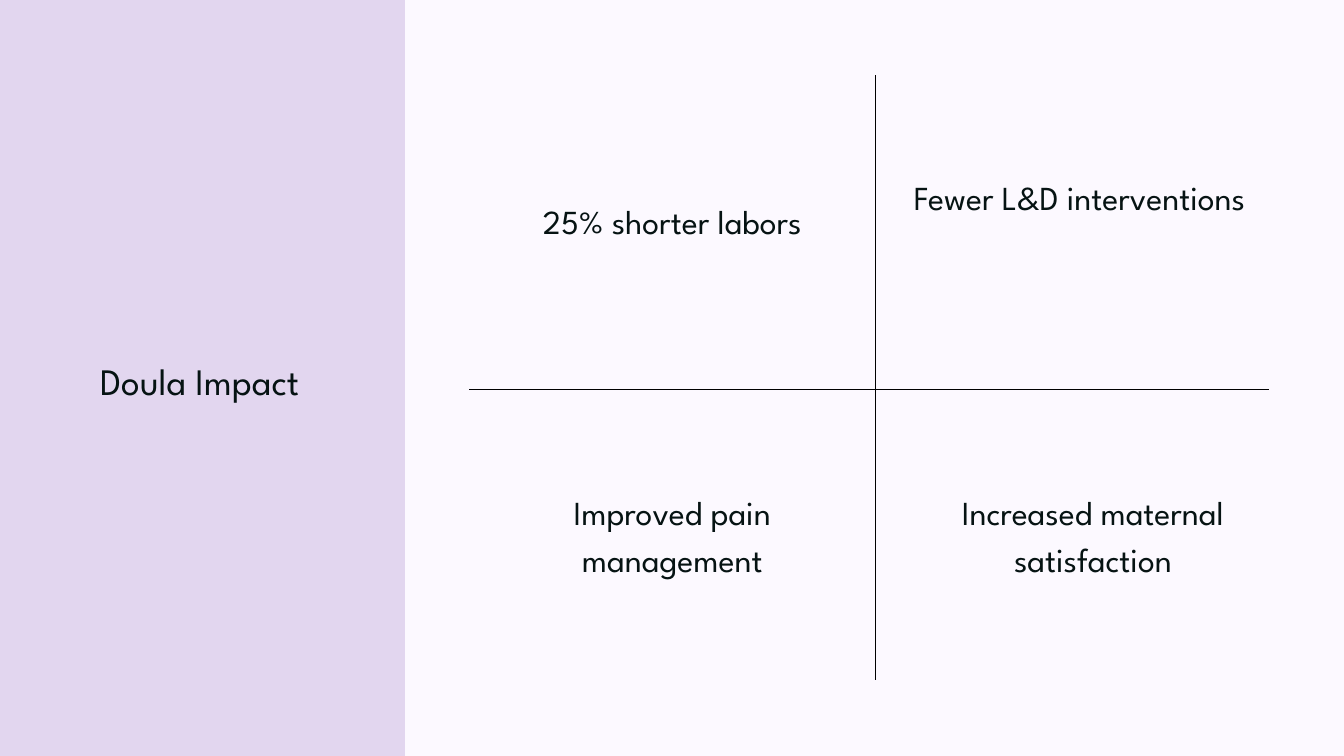
from typing import NamedTuple

import pptx
import pptx.dml.color
import pptx.enum.shapes
import pptx.enum.text
import pptx.oxml.ns
import pptx.util
from lxml import etree

Inches = pptx.util.Inches
Pt = pptx.util.Pt

INK = "061313"
FONT = "League Spartan"


class Label(NamedTuple):
    text: str
    left: float
    top: float
    height: float


class Rule(NamedTuple):
    x1: float
    y1: float
    x2: float
    y2: float


LABELS = [
    Label("25% shorter labors", 7.39, 2.89, 0.67),
    Label("Fewer L&D interventions", 13.45, 2.54, 1.37),
    Label("Improved pain management", 7.39, 7.22, 1.37),
    Label("Increased maternal satisfaction", 13.65, 7.22, 1.37),
]
RULES = [Rule(13.03, 1.12, 13.03, 10.12), Rule(6.98, 5.79, 18.88, 5.79)]


def paint(color, code: str) -> None:
    color.rgb = pptx.dml.color.RGBColor.from_string(code)


def add_text(slide, text: str, *, left: float, top: float, width: float,
             height: float, size: float = 36, code: str = INK) -> None:
    box = slide.shapes.add_textbox(
        Inches(left), Inches(top), Inches(width), Inches(height))
    frame = box.text_frame
    frame.word_wrap = True
    frame.auto_size = pptx.enum.text.MSO_AUTO_SIZE.SHAPE_TO_FIT_TEXT
    frame.margin_left = frame.margin_right = 0
    frame.margin_top = frame.margin_bottom = 0
    para = frame.paragraphs[0]
    para.alignment = pptx.enum.text.PP_ALIGN.CENTER
    para.line_spacing = Pt(size * 1.4)
    run = para.add_run()
    run.text = text
    run.font.name = FONT
    run.font.size = Pt(size)
    paint(run.font.color, code)


def add_panel(slide, left: float, width: float, height: float, code: str) -> None:
    panel = slide.shapes.add_shape(
        pptx.enum.shapes.MSO_SHAPE.RECTANGLE,
        Inches(left), 0, Inches(width), Inches(height))
    panel.shadow.inherit = False
    panel.fill.solid()
    paint(panel.fill.fore_color, code)
    panel.line.fill.background()


def add_rule(slide, rule: Rule) -> None:
    line = slide.shapes.add_connector(
        pptx.enum.shapes.MSO_CONNECTOR.STRAIGHT, *map(Inches, rule))
    line.line.width = Pt(0.75)
    paint(line.line.color, "000000")
    etree.SubElement(line._element.spPr, pptx.oxml.ns.qn("a:effectLst"))


def main() -> None:
    deck = pptx.Presentation()
    deck.slide_width, deck.slide_height = Inches(20), Inches(11.25)
    slide = deck.slides.add_slide(deck.slide_layouts[6])
    back = slide.background.fill
    back.solid()
    paint(back.fore_color, "E2D6EF")

    add_panel(slide, 6.03, 13.97, 11.25, "FCF9FF")
    for rule in RULES:
        add_rule(slide, rule)
    add_text(slide, "Doula Impact", left=0.51, top=5.22, width=4.92,
             height=0.73, size=40)
    for label in LABELS:
        add_text(slide, label.text, left=label.left, top=label.top,
                 width=5.23, height=label.height)
    deck.save("out.pptx")


if __name__ == "__main__":
    main()
